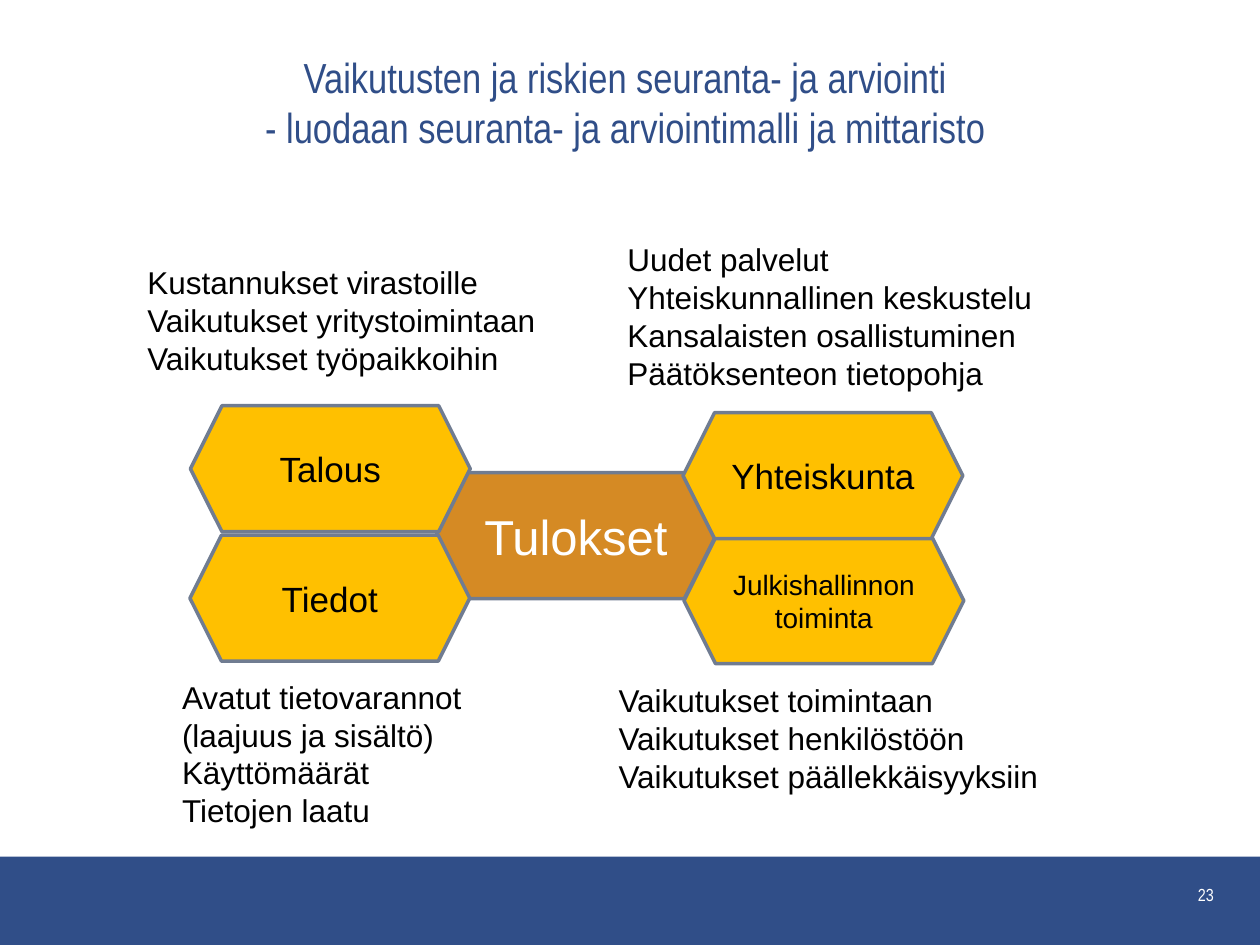
from pptx import Presentation
from pptx.dml.color import RGBColor
from pptx.enum.shapes import MSO_SHAPE
from pptx.enum.text import MSO_ANCHOR, MSO_AUTO_SIZE, PP_ALIGN
from pptx.util import Cm, Pt

RECTANGLE, HEXAGON = MSO_SHAPE.RECTANGLE, MSO_SHAPE.HEXAGON
MIDDLE = MSO_ANCHOR.MIDDLE
LEFT, CENTER, RIGHT = PP_ALIGN.LEFT, PP_ALIGN.CENTER, PP_ALIGN.RIGHT
NO_FIT, FIT_SHAPE = MSO_AUTO_SIZE.NONE, MSO_AUTO_SIZE.SHAPE_TO_FIT_TEXT
TITLE_ONLY = 5

COLORS = {
    "blue": "304E88",
    "orange": "D58A24",
    "yellow": "FFC000",
    "outline": "707C91",
    "black": "000000",
    "white": "FFFFFF",
}
BODY_FONT, NARROW_FONT = "Arial", "Arial Narrow"
HEXAGON_WIDTH, HEXAGON_HEIGHT = 5.64, 2.54


def color(name):
    return RGBColor.from_string(COLORS[name])


class SlideBuilder:
    def __init__(self, slide):
        self.slide = slide

    def format_text(self, text_frame, size, font_name, color_name, alignment):
        for paragraph in text_frame.paragraphs:
            paragraph.alignment = alignment
            for run in paragraph.runs:
                run.font.size = Pt(size)
                run.font.name = font_name
                run.font.color.rgb = color(color_name)

    def title(self, text, left, top, width, height):
        shape = self.slide.shapes.title
        shape.left, shape.top = Cm(left), Cm(top)
        shape.width, shape.height = Cm(width), Cm(height)
        text_frame = shape.text_frame
        text_frame.text = text
        text_frame.auto_size = NO_FIT
        text_frame.vertical_anchor = MIDDLE
        self.format_text(text_frame, 24, NARROW_FONT, "blue", CENTER)

    def shape(self, kind, left, top, width, height, fill):
        shape = self.slide.shapes.add_shape(
            kind, Cm(left), Cm(top), Cm(width), Cm(height))
        shape.shadow.inherit = False
        shape.fill.solid()
        shape.fill.fore_color.rgb = color(fill)
        shape.line.fill.background()
        return shape

    def hexagon(self, text, left, top, size=20, fill="yellow", text_color="black"):
        shape = self.shape(HEXAGON, left, top, HEXAGON_WIDTH, HEXAGON_HEIGHT, fill)
        shape.line.color.rgb = color("outline")
        shape.line.width = Pt(2)
        text_frame = shape.text_frame
        text_frame.text = text
        text_frame.vertical_anchor = MIDDLE
        self.format_text(text_frame, size, BODY_FONT, text_color, CENTER)

    def text_box(self, lines, left, top, width, height, size=18,
                 font_name=BODY_FONT, color_name="black", alignment=LEFT):
        box = self.slide.shapes.add_textbox(
            Cm(left), Cm(top), Cm(width), Cm(height))
        text_frame = box.text_frame
        text_frame.text = "\n".join(lines)
        text_frame.word_wrap = False
        text_frame.auto_size = FIT_SHAPE
        self.format_text(text_frame, size, font_name, color_name, alignment)


def main():
    presentation = Presentation()
    presentation.slide_width, presentation.slide_height = Cm(25.4), Cm(19.05)
    layout = presentation.slide_layouts[TITLE_ONLY]
    builder = SlideBuilder(presentation.slides.add_slide(layout))

    # Footer band and page number
    builder.shape(RECTANGLE, 0, 17.27, 25.4, 1.78, "blue")
    builder.text_box(["23"], 23.37, 17.7, 1.35, 0.58, 10,
                     NARROW_FONT, "white", RIGHT)

    # Title
    builder.title("Vaikutusten ja riskien seuranta- ja arviointi\v"
                  "- luodaan seuranta- ja arviointimalli ja mittaristo",
                  1.55, 0.66, 22.1, 2.79)

    # Results in the centre, with the four areas around them
    builder.hexagon("Tulokset", 8.79, 9.53, 28, "orange", "white")
    builder.hexagon("Talous", 3.84, 8.18)
    builder.hexagon("Tiedot", 3.83, 10.79)
    builder.hexagon("Julkishallinnon toiminta", 13.79, 10.84, 16)
    builder.hexagon("Yhteiskunta", 13.77, 8.32)

    # Notes for each area
    builder.text_box(["Kustannukset virastoille",
                      "Vaikutukset yritystoimintaan",
                      "Vaikutukset työpaikkoihin"], 2.72, 5.18, 8.41, 2.57)
    builder.text_box(["Uudet palvelut",
                      "Yhteiskunnallinen keskustelu",
                      "Kansalaisten osallistuminen",
                      "Päätöksenteon tietopohja"], 12.4, 4.72, 8.74, 3.33)
    builder.text_box(["Vaikutukset toimintaan",
                      "Vaikutukset henkilöstöön",
                      "Vaikutukset päällekkäisyyksiin"], 12.22, 13.61, 9.04, 2.57)
    builder.text_box(["Avatut tietovarannot",
                      "(laajuus ja sisältö)",
                      "Käyttömäärät",
                      "Tietojen laatu"], 3.42, 13.54, 6.2, 3.33)

    presentation.save("out.pptx")


if __name__ == "__main__":
    main()
